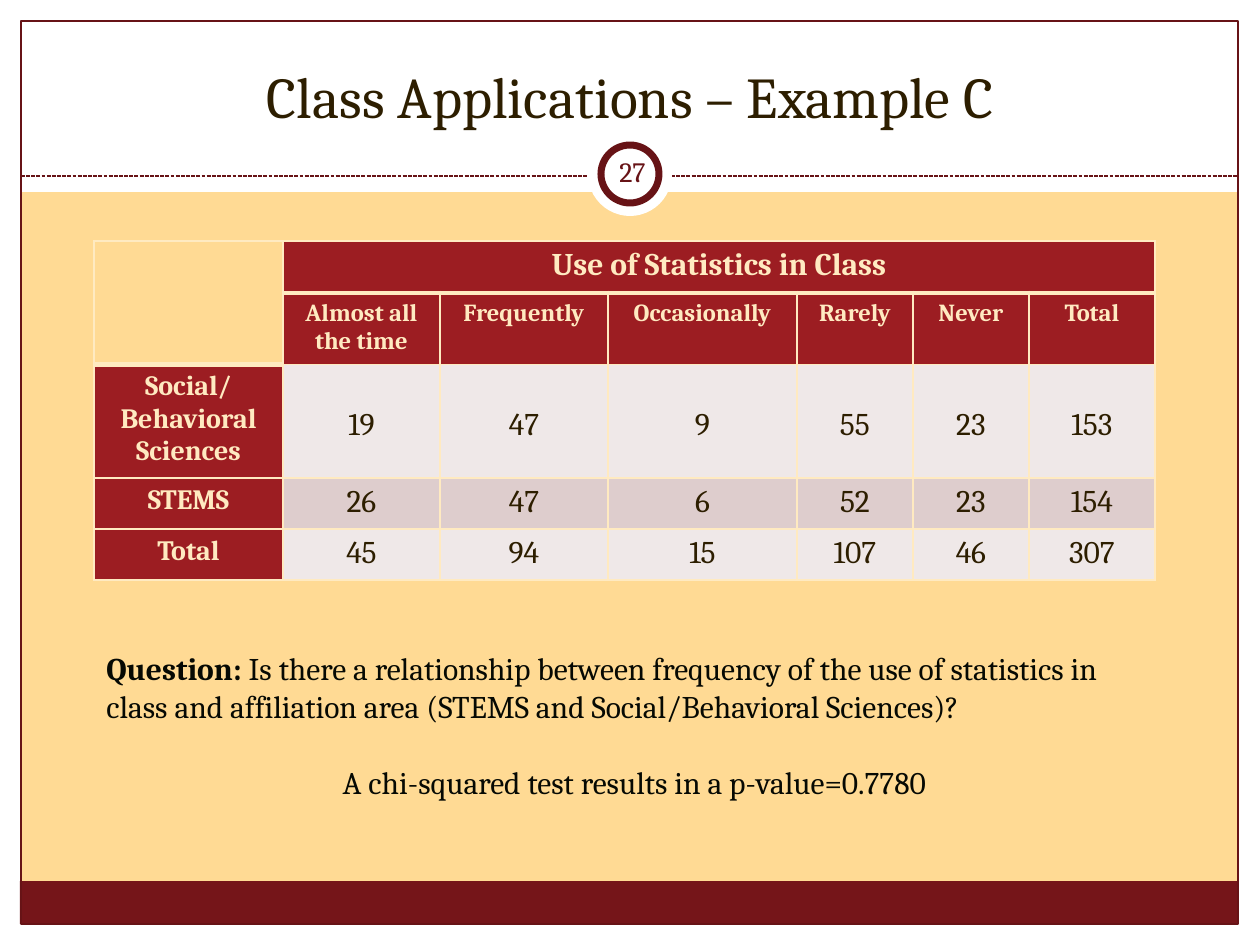
import lxml.etree
import pptx
import pptx.chart.data
import pptx.dml.color
import pptx.enum.dml
import pptx.enum.shapes
import pptx.enum.text
import pptx.oxml.ns
import pptx.util

FONT = "Cambria"
WHITE, SAND, CREAM = "FFFFFF", "FFDA94", "FFEAC1"
WINE, BAND, HEAD = "671316", "751519", "9C1D22"
DARK, BLACK = "2D1E00", "060903"
STRIPES = ["EFE8E8", "DECDCD"]

TITLE = "Class Applications – Example C"
NUMBER = "27"
ASK = [("Question: ", True),
       ("Is there a relationship between frequency of the use of statistics in "
        "class and affiliation area (STEMS and Social/Behavioral Sciences)?", False)]
RESULT = [("A chi-squared test results in a p-value=0.7780", False)]

GROUP = "Use of Statistics in Class"
LABELS = ["Almost all the time", "Frequently", "Occasionally", "Rarely", "Never", "Total"]
DATA = [("Social/ Behavioral Sciences", [19, 47, 9, 55, 23, 153]),
        ("STEMS", [26, 47, 6, 52, 23, 154]),
        ("Total", [45, 94, 15, 107, 46, 307])]
WIDTHS = [189, 157, 168, 189, 116, 116, 126]
HEIGHTS = [52, 69, 108, 51, 51]

SHAPE = pptx.enum.shapes.MSO_SHAPE
ALIGN = pptx.enum.text.PP_ALIGN
ANCHOR = pptx.enum.text.MSO_ANCHOR


def px(n):
    return pptx.util.Emu(round(n * 914400 / 126))


def color(code):
    return pptx.dml.color.RGBColor.from_string(code)


def tag(parent, name, **attrs):
    return lxml.etree.SubElement(parent, pptx.oxml.ns.qn(name), attrs)


def draw(kind, box, fill=None, line=None, width=0.75):
    shape = slide.shapes.add_shape(kind, *map(px, box))
    shape.shadow.inherit = False
    if fill:
        shape.fill.solid()
        shape.fill.fore_color.rgb = color(fill)
    else:
        shape.fill.background()
    if line:
        shape.line.color.rgb = color(line)
        shape.line.width = pptx.util.Pt(width)
    else:
        shape.line.fill.background()


def write(frame, paras, size, ink, align=ALIGN.CENTER, bold=False):
    """Fill a text frame; each paragraph is a string or a list of (text, bold)."""
    frame.word_wrap = True
    for i, para in enumerate(paras):
        line = frame.paragraphs[0] if i == 0 else frame.add_paragraph()
        line.alignment = align
        for text, heavy in [(para, bold)] if isinstance(para, str) else para:
            run = line.add_run()
            run.text = text
            run.font.name = FONT
            run.font.size = pptx.util.Pt(size)
            run.font.bold = heavy
            run.font.color.rgb = color(ink)


def label(box, paras, size, ink, anchor=ANCHOR.TOP, inset=None, **style):
    frame = slide.shapes.add_textbox(*map(px, box)).text_frame
    frame.vertical_anchor = anchor
    if inset is not None:
        frame.margin_left = frame.margin_right = px(inset)
        frame.margin_top = frame.margin_bottom = px(inset)
    write(frame, paras, size, ink, **style)
    return frame


def border(cell, row, col):
    """Thin cream edges, with a thick one below the group head and the corner."""
    def weight(top):
        return 3 if top == (2 if col == 0 else 1) else 1

    props = cell._tc.get_or_add_tcPr()
    edges = [("L", 1), ("R", 1), ("T", weight(row)), ("B", weight(row + 1))]
    for spot, (side, width) in enumerate(edges):
        edge = tag(props, "a:ln" + side, w=str(pptx.util.Pt(width)))
        tag(tag(edge, "a:solidFill"), "a:srgbClr", val=CREAM)
        props.insert(spot, edge)


def add_grid():
    box = (94, 241, sum(WIDTHS), sum(HEIGHTS))
    table = slide.shapes.add_table(len(HEIGHTS), len(WIDTHS), *map(px, box)).table
    table.first_row = table.horz_banding = False
    for col, width in zip(table.columns, WIDTHS):
        col.width = px(width)
    for row, height in zip(table.rows, HEIGHTS):
        row.height = px(height)
    table.cell(0, 0).merge(table.cell(1, 0))
    table.cell(0, 1).merge(table.cell(0, len(LABELS)))

    def put(row, col, text, size, fill=HEAD, ink=CREAM, bold=True):
        cell = table.cell(row, col)
        cell.fill.solid()
        cell.fill.fore_color.rgb = color(fill)
        write(cell.text_frame, [text], size, ink, bold=bold)

    table.cell(0, 0).fill.background()
    put(0, 1, GROUP, 18)
    for col, text in enumerate(LABELS, 1):
        put(1, col, text, 14)
    for row, (name, values) in enumerate(DATA, 2):
        put(row, 0, name, 16)
        for col, value in enumerate(values, 1):
            put(row, col, str(value), 18, STRIPES[row % 2], DARK, False)
            if row == 2:
                table.cell(row, col).margin_top = px(43)
    for row in range(len(HEIGHTS)):
        for col in range(len(WIDTHS)):
            border(table.cell(row, col), row, col)


deck = pptx.Presentation()
deck.slide_width, deck.slide_height = px(1260), px(945)
slide = deck.slides.add_slide(deck.slide_layouts[6])
slide.background.fill.solid()
slide.background.fill.fore_color.rgb = color(SAND)

for box in [(0, 924, 1260, 21), (0, 0, 1260, 192), (0, 0, 21, 945), (1239, 0, 21, 945)]:
    draw(SHAPE.RECTANGLE, box, WHITE)
draw(SHAPE.RECTANGLE, (20, 881, 1218, 43), BAND)
draw(SHAPE.RECTANGLE, (21, 21, 1217, 903), line=WINE)

rule = slide.shapes.add_connector(
    pptx.enum.shapes.MSO_CONNECTOR.STRAIGHT, px(21), px(176), px(1239), px(176))
rule.line.color.rgb = color(WINE)
rule.line.width = pptx.util.Pt(0.75)
rule.line.dash_style = pptx.enum.dml.MSO_LINE.SQUARE_DOT
tag(rule._element.spPr, "a:effectLst")

draw(SHAPE.OVAL, (588, 132, 84, 84), WHITE)
draw(SHAPE.OVAL, (601, 145, 58, 58), WHITE, WINE, 4)

label((42, 32, 1176, 104), [TITLE], 33, DARK, ANCHOR.BOTTOM)
add_grid()
notes = label((94, 643, 1081, 165), [ASK, RESULT], 18, BLACK, align=ALIGN.LEFT)
notes.paragraphs[1].alignment = ALIGN.CENTER
notes.paragraphs[1].space_before = pptx.util.Pt(22)
label((601, 141, 63, 60), [NUMBER], 16, WINE, ANCHOR.MIDDLE, 6)

deck.save("out.pptx")
